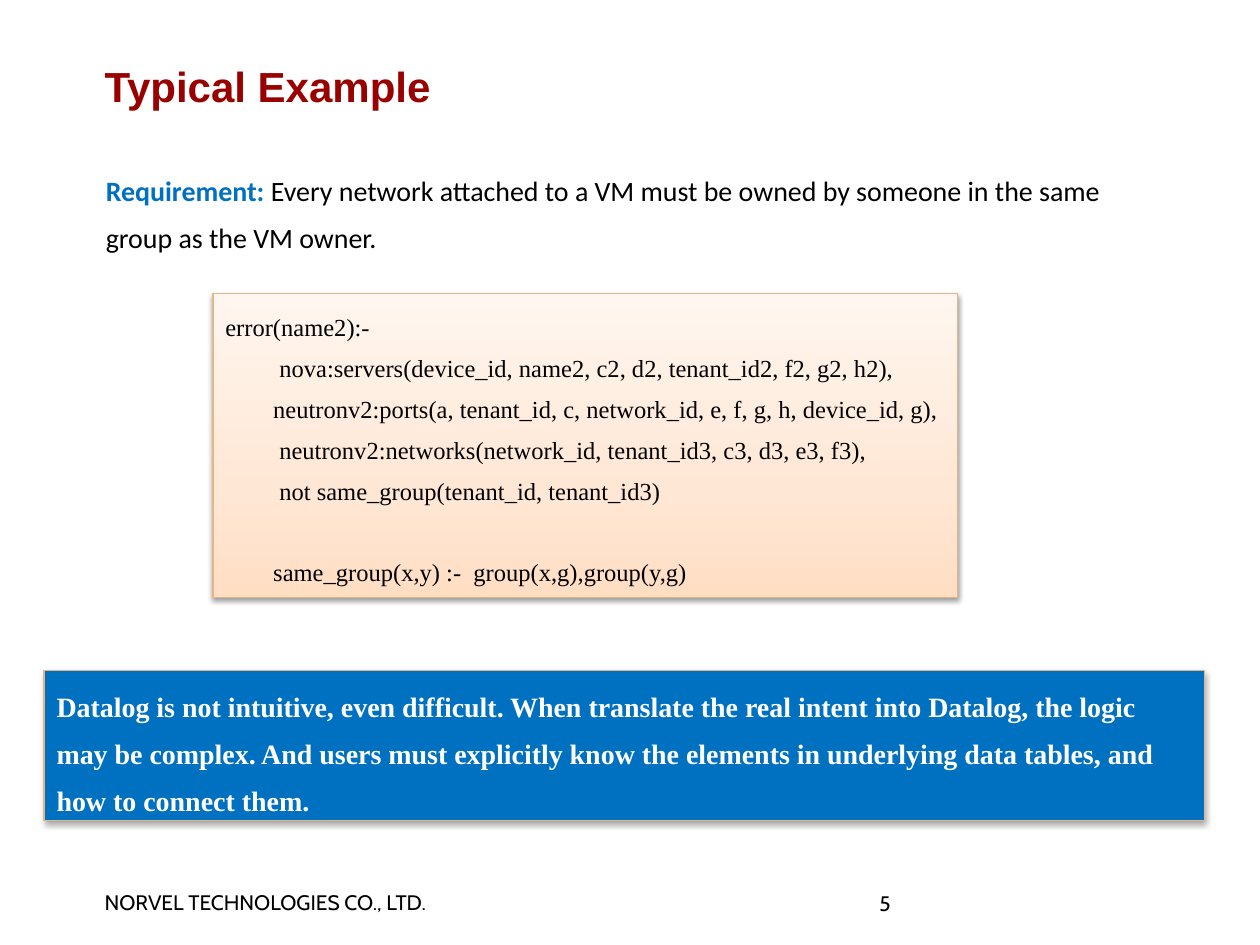
import copy

import pptx
import pptx.dml.color
import pptx.enum.shapes
import pptx.enum.text
import pptx.oxml
import pptx.oxml.ns
import pptx.util

RGB = pptx.dml.color.RGBColor
Inches = pptx.util.Inches
Pt = pptx.util.Pt
Anchor = pptx.enum.text.MSO_ANCHOR
AutoSize = pptx.enum.text.MSO_AUTO_SIZE

BLACK = RGB(0, 0, 0)
WHITE = RGB(255, 255, 255)
RED = RGB(0x99, 0, 0)
BLUE = RGB(0, 0x70, 0xC0)
TAN = RGB(0xE4, 0xB5, 0x85)
PEACH = [(0, RGB(0xFF, 0xDE, 0xC4)), (0.35, RGB(0xFF, 0xE7, 0xD5)),
         (1, RGB(0xFF, 0xF6, 0xEF))]

TITLE = dict(name="Arial", size=Pt(24), bold=True, color=RED)
BODY = dict(name="Calibri", size=Pt(16), bold=False, color=BLACK)
LABEL = dict(BODY, bold=True, color=BLUE)
CODE = dict(name="Times New Roman", size=Pt(14), bold=False, color=BLACK)
CLAIM = dict(CODE, size=Pt(16), bold=True, color=WHITE)
FOOTER = dict(name="Cabin", size=Pt(12), bold=False, color=BLACK)

RULE = [
    "error(name2):-",
    " nova:servers(device_id, name2, c2, d2, tenant_id2, f2, g2, h2),",
    "neutronv2:ports(a, tenant_id, c, network_id, e, f, g, h, device_id, g),",
    " neutronv2:networks(network_id, tenant_id3, c3, d3, e3, f3),",
    " not same_group(tenant_id, tenant_id3)",
    "same_group(x,y) :-  group(x,g),group(y,g)",
]
CODE_INDENT = Inches(0.38)
BLANK_LINE = Pt(22.5)


def add_run(p, text, style):
    r = p.add_run()
    r.text = text
    for key, value in style.items():
        if key == "color":
            r.font.color.rgb = value
        else:
            setattr(r.font, key, value)


def set_frame(tf, margins=(0.1, 0.05, 0.1, 0.05), **options):
    sides = ("left", "top", "right", "bottom")
    values = {f"margin_{side}": Inches(m) for side, m in zip(sides, margins)}
    values.update(dict(word_wrap=True, vertical_anchor=Anchor.TOP,
                       auto_size=AutoSize.NONE), **options)
    for key, value in values.items():
        setattr(tf, key, value)


def fill_paragraph(p, runs, spacing=1.0):
    p.alignment = pptx.enum.text.PP_ALIGN.LEFT
    p.line_spacing = spacing
    for text, style in runs:
        add_run(p, text, style)


def add_title(s, box, text):
    sp = s.shapes.title
    sp.left, sp.top, sp.width, sp.height = map(Inches, box)
    set_frame(sp.text_frame, (0, 0.04, 0.09, 0.04),
              vertical_anchor=Anchor.MIDDLE)
    fill_paragraph(sp.text_frame.paragraphs[0], [(text, TITLE)])


def add_text(s, box, runs, margins, spacing=1.0, **options):
    tf = s.shapes.add_textbox(*map(Inches, box)).text_frame
    set_frame(tf, margins, **options)
    fill_paragraph(tf.paragraphs[0], runs, spacing)


def add_shadow(sp, distance, opacity):
    sp.shadow.inherit = False
    effects = sp._element.spPr.find(pptx.oxml.ns.qn("a:effectLst"))
    effects.append(pptx.oxml.parse_xml(
        f'<a:outerShdw {pptx.oxml.ns.nsdecls("a")} blurRad="{Pt(3.1)}" '
        f'dist="{Pt(distance)}" dir="5400000" rotWithShape="0">'
        f'<a:srgbClr val="000000"><a:alpha val="{opacity * 1000}"/>'
        '</a:srgbClr></a:outerShdw>'))


def fill_gradient(sp, colours):
    sp.fill.gradient()
    sp.fill.gradient_angle = 90
    # The default gradient has two stops, so copy one for the middle
    first = sp._element.spPr.find(".//" + pptx.oxml.ns.qn("a:gs"))
    first.addnext(copy.deepcopy(first))
    for stop, (position, colour) in zip(sp.fill.gradient_stops, colours):
        stop.position = position
        stop.color.rgb = colour


def add_panel(s, box, distance, opacity):
    sp = s.shapes.add_shape(pptx.enum.shapes.MSO_SHAPE.RECTANGLE,
                            *map(Inches, box))
    sp.line.color.rgb = TAN
    sp.line.width = Pt(0.75)
    add_shadow(sp, distance, opacity)
    set_frame(sp.text_frame, auto_size=AutoSize.SHAPE_TO_FIT_TEXT)
    return sp


def add_code(s, box, lines):
    sp = add_panel(s, box, 1.6, 38)
    fill_gradient(sp, PEACH)
    tf = sp.text_frame
    for i, line in enumerate(lines):
        p = tf.paragraphs[0] if i == 0 else tf.add_paragraph()
        fill_paragraph(p, [(line, CODE)], 1.4)
        pPr = p._p.get_or_add_pPr()
        pPr.set("marL", str(CODE_INDENT))
        pPr.set("indent", str(0 if i else -CODE_INDENT))
    # The helper rule stands one line below the main rule
    p.space_before = BLANK_LINE


def add_claim(s, box, text):
    sp = add_panel(s, box, 1.8, 35)
    sp.fill.solid()
    sp.fill.fore_color.rgb = BLUE
    fill_paragraph(sp.text_frame.paragraphs[0], [(text, CLAIM)], 1.4)


def main():
    prs = pptx.Presentation()
    prs.slide_width, prs.slide_height = Inches(10), Inches(7.5)
    s = prs.slides.add_slide(prs.slide_layouts[5])

    # Footer
    add_text(s, (0.83, 7.06, 2.78, 0.2),
             [("NORVEL TECHNOLOGIES CO., LTD.", FOOTER)],
             (0, 0, 0.09, 0), word_wrap=False)
    add_text(s, (6.94, 7.1, 1.97, 0.4), [("5", FOOTER)],
             (0.04, 0, 0, 0), 0.85)

    # Title and requirement
    add_title(s, (0.83, 0.36, 7.87, 0.64), "Typical Example")
    add_text(s, (0.75, 1.23, 8.19, 0.87),
             [("Requirement:", LABEL),
              (" Every network attached to a VM must be owned by someone "
               "in the same group as the VM owner.", BODY)],
             (0.09, 0.04, 0.09, 0.04), 1.4)

    # Datalog rule and the conclusion
    add_code(s, (1.69, 2.33, 5.91, 2.41), RULE)
    add_claim(s, (0.35, 5.32, 9.21, 1.19),
              "Datalog is not intuitive, even difficult. When translate the "
              "real intent into Datalog, the logic may be complex. And users "
              "must explicitly know the elements in underlying data tables, "
              "and how to connect them.")

    prs.save("out.pptx")


if __name__ == "__main__":
    main()
